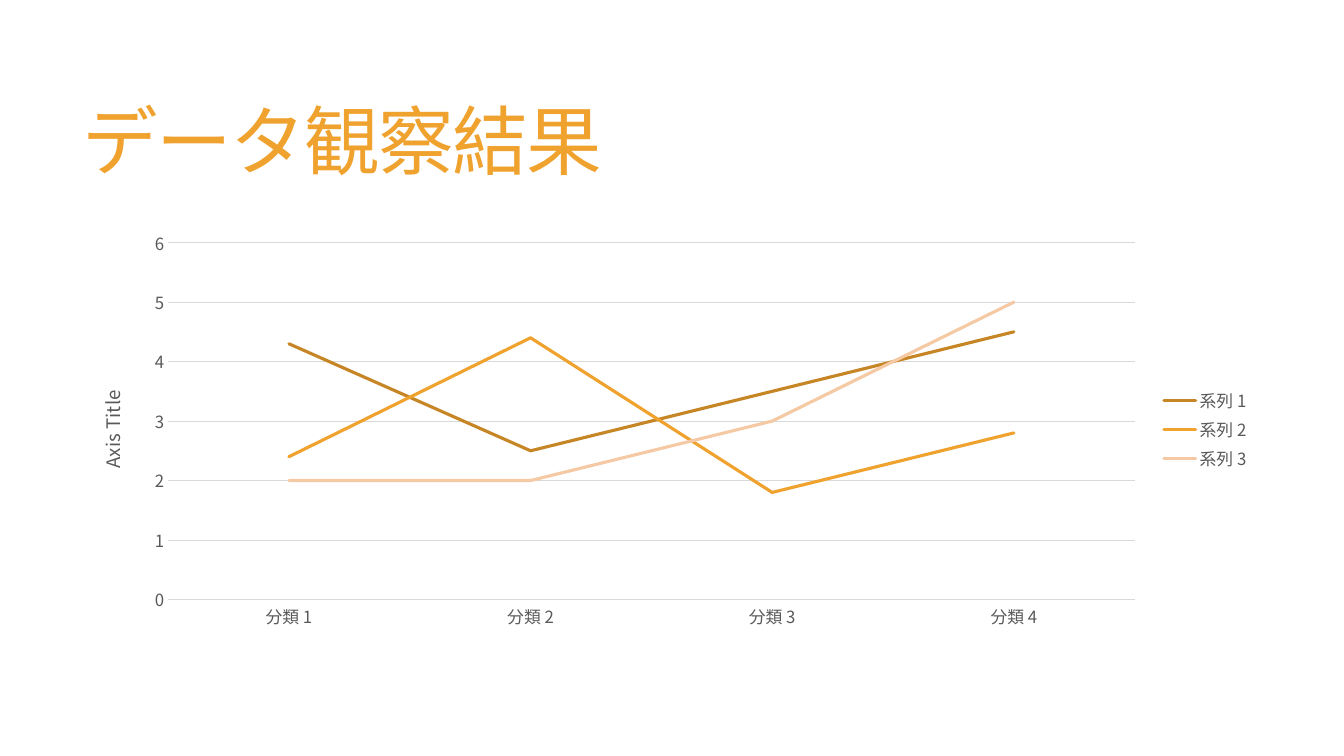
from lxml import etree
from pptx import Presentation
from pptx.chart.data import CategoryChartData
from pptx.dml.color import RGBColor
from pptx.enum.chart import XL_CHART_TYPE as ChartType
from pptx.enum.chart import XL_LEGEND_POSITION as LegendPosition
from pptx.enum.chart import XL_MARKER_STYLE as MarkerStyle
from pptx.enum.chart import XL_TICK_MARK as TickMark
from pptx.enum.text import MSO_ANCHOR, PP_ALIGN
from pptx.oxml.ns import qn
from pptx.util import Inches, Pt

FONT = "Noto Sans CJK JP"
BLACK = RGBColor(0x00, 0x00, 0x00)
GRAY = RGBColor(0x59, 0x59, 0x59)
LIGHT_GRAY = RGBColor(0xD9, 0xD9, 0xD9)
BROWN = RGBColor(0xC7, 0x86, 0x26)
ORANGE = RGBColor(0xF0, 0xA2, 0x2E)
PEACH = RGBColor(0xF5, 0xC9, 0xA4)

CATEGORIES = ["分類 1", "分類 2", "分類 3", "分類 4"]
SERIES = [
    ("系列 1", (4.3, 2.5, 3.5, 4.5), BROWN),
    ("系列 2", (2.4, 4.4, 1.8, 2.8), ORANGE),
    ("系列 3", (2, 2, 3, 5), PEACH),
]


def style_font(font, size, color):
    font.size = Pt(size)
    font.bold = False
    font.color.rgb = color
    font.name = FONT
    latin = font._element.find(qn("a:latin"))
    east_asian = etree.Element(qn("a:ea"), typeface=FONT)
    latin.addnext(east_asian)


def style_line(line, color, width):
    line.color.rgb = color
    line.width = Pt(width)


def add_title(slide, text):
    title = slide.shapes.title
    title.left, title.top = Inches(0.72), Inches(0.55)
    title.width, title.height = Inches(11.78), Inches(1.81)
    frame = title.text_frame
    frame.word_wrap = True
    frame.vertical_anchor = MSO_ANCHOR.MIDDLE
    paragraph = frame.paragraphs[0]
    paragraph.alignment = PP_ALIGN.LEFT
    paragraph.line_spacing = 0.85
    run = paragraph.add_run()
    run.text = text
    style_font(run.font, 54, ORANGE)
    run.font._element.set("spc", "-120")


def style_axis(axis):
    axis.major_tick_mark = TickMark.NONE
    axis.minor_tick_mark = TickMark.NONE
    style_font(axis.tick_labels.font, 12, GRAY)


def style_value_axis(axis):
    style_axis(axis)
    axis.minimum_scale, axis.maximum_scale, axis.major_unit = 0, 6, 1
    axis.format.line.fill.background()
    axis.has_major_gridlines = True
    style_line(axis.major_gridlines.format.line, LIGHT_GRAY, 0.75)
    frame = axis.axis_title.text_frame
    run = frame.paragraphs[0].add_run()
    run.text = "Axis Title"
    style_font(run.font, 13.3, GRAY)
    body = frame._txBody.bodyPr
    body.set("rot", "-5400000")
    body.set("vert", "horz")


def add_line_chart(slide):
    data = CategoryChartData()
    data.categories = CATEGORIES
    for name, values, _ in SERIES:
        data.add_series(name, values)
    chart = slide.shapes.add_chart(
        ChartType.LINE, Inches(0.74), Inches(2.2), Inches(11.76), Inches(4.12), data
    ).chart
    chart.has_title = False
    style_font(chart.font, 10, BLACK)
    chart.plots[0].vary_by_categories = False
    style_axis(chart.category_axis)
    style_line(chart.category_axis.format.line, LIGHT_GRAY, 0.75)
    style_value_axis(chart.value_axis)
    chart.has_legend = True
    chart.legend.position = LegendPosition.RIGHT
    chart.legend.include_in_layout = False
    style_font(chart.legend.font, 12, GRAY)
    for series, (_, _, color) in zip(chart.plots[0].series, SERIES):
        series.smooth = False
        series.marker.style = MarkerStyle.NONE
        style_line(series.format.line, color, 2.25)
        series.format.line._ln.set("cap", "rnd")


def main():
    presentation = Presentation()
    presentation.slide_width = Inches(13.33)
    presentation.slide_height = Inches(7.5)
    slide = presentation.slides.add_slide(presentation.slide_layouts[5])
    add_title(slide, "データ観察結果")
    add_line_chart(slide)
    presentation.save("out.pptx")


if __name__ == "__main__":
    main()
